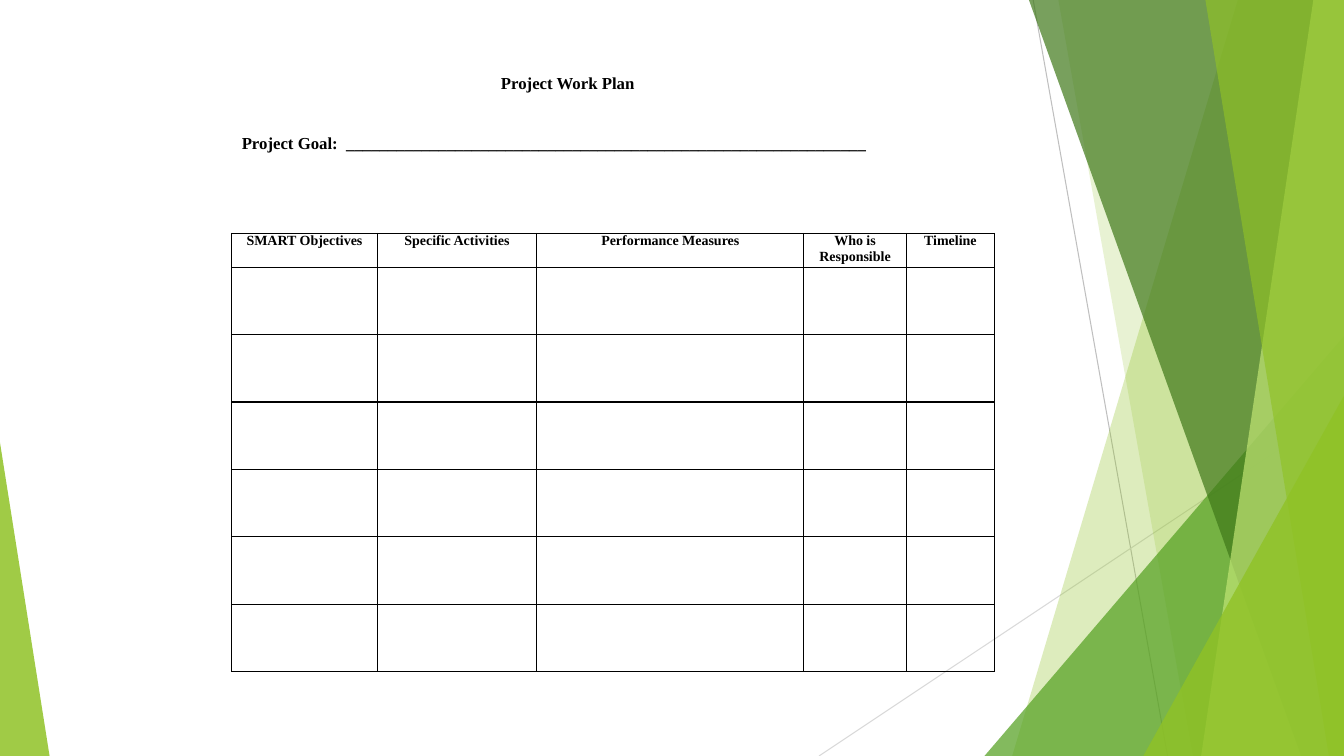
from dataclasses import dataclass

from lxml.etree import SubElement
from pptx import Presentation
from pptx.dml.color import RGBColor
from pptx.enum.shapes import MSO_CONNECTOR, MSO_SHAPE
from pptx.enum.text import MSO_ANCHOR, PP_ALIGN
from pptx.oxml.ns import qn
from pptx.shapes.autoshape import Shape
from pptx.slide import Slide
from pptx.table import _Cell
from pptx.text.text import _Paragraph
from pptx.util import Emu, Inches, Pt

COLUMNS, ROWS = 160, 90
UNIT = Inches(1) / 12

BLACK = RGBColor(0x00, 0x00, 0x00)
GREY = RGBColor(0xBF, 0xBF, 0xBF)
PALE_GREY = RGBColor(0xD9, 0xD9, 0xD9)
LIME = RGBColor(0x90, 0xC2, 0x26)
PALE_LIME = RGBColor(0xC0, 0xE4, 0x74)
GREEN = RGBColor(0x54, 0xA0, 0x21)
DARK_GREEN = RGBColor(0x3F, 0x78, 0x19)
FONT = "Times New Roman"


@dataclass(frozen=True)
class Ray:
    start: tuple[float, float]
    end: tuple[float, float]
    color: RGBColor


@dataclass(frozen=True)
class Band:
    top_column: float
    bottom_column: float
    color: RGBColor
    opacity: int


@dataclass(frozen=True)
class Wedge:
    left: float
    right: float
    peak_row: float
    peak_share: float
    color: RGBColor
    opacity: int


@dataclass(frozen=True)
class PlanColumn:
    heading: str
    width: float


RAYS = [
    Ray((123, 0), (139, ROWS), GREY),
    Ray((COLUMNS, 48.36), (97.5, ROWS), PALE_GREY),
]
FACETS = [
    Band(147.36, 120.5, LIME, 30),
    Band(126, 142, LIME, 20),
    Wedge(117.2, COLUMNS, 40, 1, GREEN, 72),
    Band(122.5, 154.9, DARK_GREEN, 70),
    Band(156.36, 143, PALE_LIME, 70),
    Band(143.5, 158.2, LIME, 65),
    Wedge(136.1, COLUMNS, 47.1, 1, LIME, 80),
    Wedge(0, 5.9, 52.7, 0, LIME, 85),
]
PLAN_COLUMNS = [
    PlanColumn("SMART Objectives", 17.3),
    PlanColumn("Specific Activities", 19),
    PlanColumn("Performance Measures", 31.8),
    PlanColumn("Who is Responsible", 12.2),
    PlanColumn("Timeline", 10.5),
]
OBJECTIVE_COUNT = 6
HEADING_HEIGHT, OBJECTIVE_HEIGHT = 4, 8.03


def grid(cells: float) -> Emu:
    return Emu(round(cells * UNIT))


def draw_ray(slide: Slide, ray: Ray) -> None:
    line = slide.shapes.add_connector(
        MSO_CONNECTOR.STRAIGHT, *map(grid, ray.start), *map(grid, ray.end)
    )
    line.line.color.rgb = ray.color
    line.line.width = Pt(0.75)
    SubElement(line._element.spPr, qn("a:effectLst"))


def band_shape(slide: Slide, band: Band) -> Shape:
    builder = slide.shapes.build_freeform(grid(band.top_column), 0)
    corners = [(COLUMNS, 0), (COLUMNS, ROWS), (band.bottom_column, ROWS)]
    builder.add_line_segments([(grid(x), grid(y)) for x, y in corners], close=True)
    return builder.convert_to_shape()


def wedge_shape(slide: Slide, wedge: Wedge) -> Shape:
    triangle = slide.shapes.add_shape(
        MSO_SHAPE.ISOSCELES_TRIANGLE,
        grid(wedge.left),
        grid(wedge.peak_row),
        grid(wedge.right - wedge.left),
        grid(ROWS - wedge.peak_row),
    )
    triangle.adjustments[0] = wedge.peak_share
    return triangle


def draw_facet(slide: Slide, facet: Band | Wedge) -> None:
    build = band_shape if isinstance(facet, Band) else wedge_shape
    shape = build(slide, facet)
    shape.shadow.inherit = False
    shape.line.fill.background()
    shape.fill.solid()
    shape.fill.fore_color.rgb = facet.color
    tint = shape._element.spPr.find(qn("a:solidFill"))[0]
    SubElement(tint, qn("a:alpha"), val=str(facet.opacity * 1000))


def write(paragraph: _Paragraph, text: str, size: int, align: PP_ALIGN) -> None:
    paragraph.alignment = align
    run = paragraph.add_run()
    run.text = text
    run.font.name = FONT
    run.font.size = Pt(size)
    run.font.bold = True
    run.font.color.rgb = BLACK


def draw_heading(slide: Slide) -> None:
    frame = slide.shapes.add_textbox(
        grid(27.6), grid(5.5), grid(80), grid(13.3)
    ).text_frame
    frame.word_wrap = True
    frame.margin_top = grid(3.1)
    write(frame.paragraphs[0], "Project Work Plan", 12, PP_ALIGN.CENTER)
    goal = frame.add_paragraph()
    goal.space_before = Pt(29)
    write(goal, "Project Goal:  " + "_" * 62, 12, PP_ALIGN.LEFT)


def style_cell(cell: _Cell) -> None:
    cell.margin_left = cell.margin_right = Inches(0.06)
    cell.margin_top = cell.margin_bottom = 0
    cell.vertical_anchor = MSO_ANCHOR.TOP
    properties = cell._tc.get_or_add_tcPr()
    for side in ("a:lnL", "a:lnR", "a:lnT", "a:lnB"):
        border = SubElement(properties, qn(side), w=str(Pt(1)))
        paint = SubElement(border, qn("a:solidFill"))
        SubElement(paint, qn("a:srgbClr"), val=str(BLACK))
    cell.fill.background()


def draw_plan(slide: Slide) -> None:
    heights = [HEADING_HEIGHT] + [OBJECTIVE_HEIGHT] * OBJECTIVE_COUNT
    plan = slide.shapes.add_table(
        len(heights),
        len(PLAN_COLUMNS),
        grid(27.6),
        grid(27.8),
        grid(sum(column.width for column in PLAN_COLUMNS)),
        grid(sum(heights)),
    ).table
    plan.first_row = plan.horz_banding = False
    for row, height in zip(plan.rows, heights):
        row.height = grid(height)
    for cell in plan.iter_cells():
        style_cell(cell)
    for index, column in enumerate(PLAN_COLUMNS):
        plan.columns[index].width = grid(column.width)
        heading = plan.cell(0, index).text_frame.paragraphs[0]
        write(heading, column.heading, 10, PP_ALIGN.CENTER)


def main() -> None:
    deck = Presentation()
    deck.slide_width, deck.slide_height = grid(COLUMNS), grid(ROWS)
    slide = deck.slides.add_slide(deck.slide_layouts[6])
    for ray in RAYS:
        draw_ray(slide, ray)
    for facet in FACETS:
        draw_facet(slide, facet)
    draw_heading(slide)
    draw_plan(slide)
    deck.save("out.pptx")


if __name__ == "__main__":
    main()
